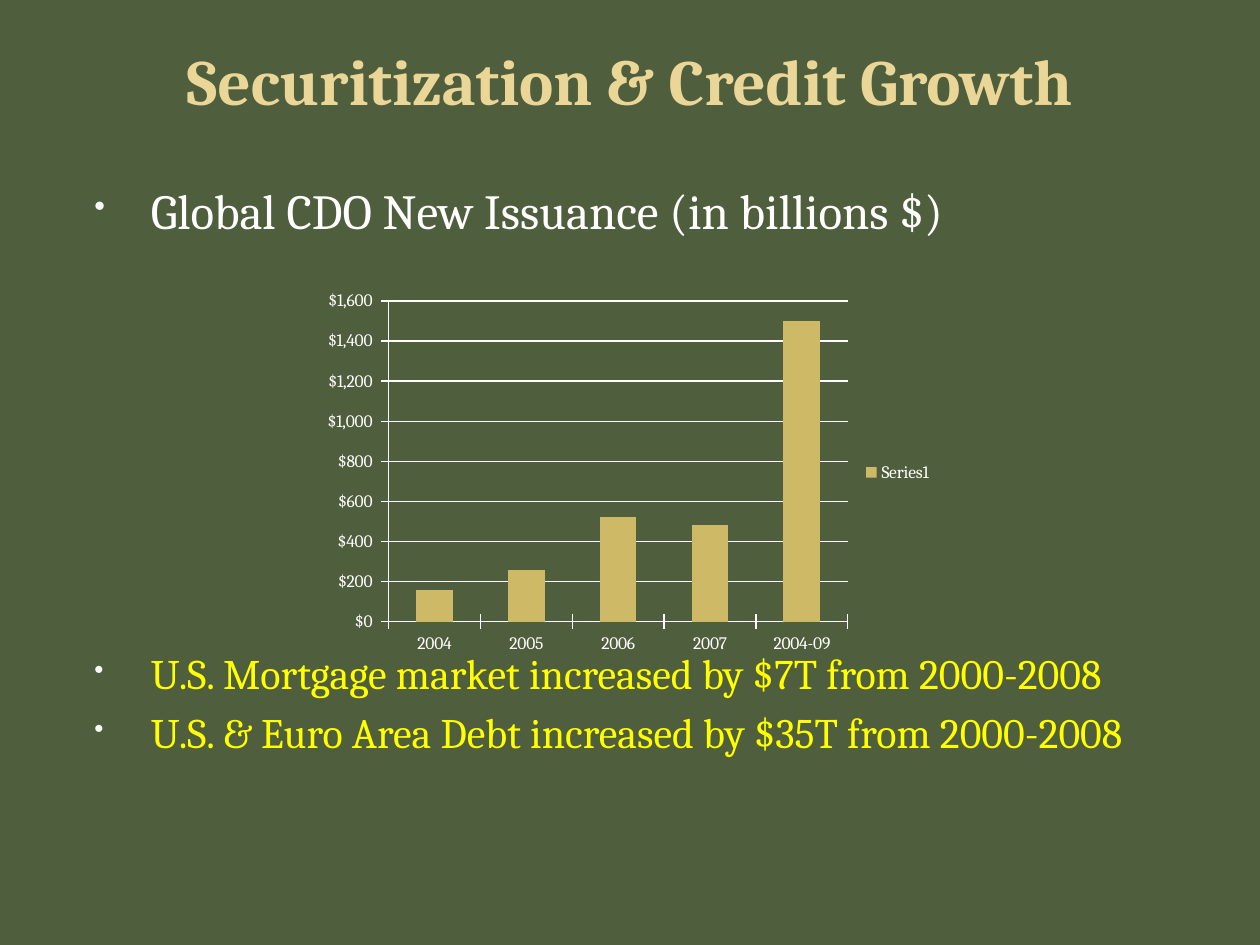
from dataclasses import dataclass

import pptx
import pptx.chart.data
import pptx.dml.color
import pptx.enum.chart
import pptx.enum.text
import pptx.oxml
import pptx.oxml.ns
import pptx.util

Pt = pptx.util.Pt
FONT = "Cambria"
COLORS = {
    "background": "4F5E3C",
    "title": "EAD696",
    "text": "FFFFFF",
    "highlight": "FFFF00",
    "bullet": "F9F9F9",
    "bar": "CEB966",
}


@dataclass
class Bullet:
    text: str
    size: float
    color: str
    line_height: float
    gap_before: float


BULLETS = [
    Bullet("Global CDO New Issuance (in billions $)", 28, "text", 37.5, 0),
    # The wide gap leaves room for the chart.
    Bullet("U.S. Mortgage market increased by $7T from 2000-2008", 24, "highlight", 28.8, 233.5),
    Bullet("U.S. & Euro Area Debt increased by $35T from 2000-2008", 24, "highlight", 28.8, 4.7),
]
ISSUANCE = {"2004": 160, "2005": 260, "2006": 520, "2007": 480, "2004-09": 1500}


def rgb(name: str) -> pptx.dml.color.RGBColor:
    return pptx.dml.color.RGBColor.from_string(COLORS[name])


def set_attributes(target, values: dict) -> None:
    for name, value in values.items():
        setattr(target, name, value)


def format_font(font, size: float, color: str, bold: bool = False) -> None:
    set_attributes(font, {"name": FONT, "size": Pt(size), "bold": bold})
    font.color.rgb = rgb(color)


def add_title(page, text: str) -> None:
    title = page.shapes.title
    set_attributes(title, {"left": Pt(36), "top": Pt(12.24), "width": Pt(648), "height": Pt(66.24)})
    frame = title.text_frame
    set_attributes(frame, {
        "text": text,
        "word_wrap": True,
        "auto_size": pptx.enum.text.MSO_AUTO_SIZE.NONE,
        "vertical_anchor": pptx.enum.text.MSO_ANCHOR.MIDDLE,
    })
    para = frame.paragraphs[0]
    para.alignment = pptx.enum.text.PP_ALIGN.CENTER
    format_font(para.runs[0].font, 36.9, "title", bold=True)


def add_bullet_mark(para) -> None:
    """Give the paragraph a hanging indent and a small round bullet."""
    properties = para._p.get_or_add_pPr()
    properties.set("marL", str(Pt(43.2)))
    properties.set("indent", str(Pt(-32.4)))
    namespace = pptx.oxml.ns.nsdecls("a")
    for markup in (
        f'<a:buClr {namespace}><a:srgbClr val="{COLORS["bullet"]}"/></a:buClr>',
        f'<a:buSzPct {namespace} val="65000"/>',
        f'<a:buChar {namespace} char="•"/>',
    ):
        properties.append(pptx.oxml.parse_xml(markup))


def add_bullets(page, bullets: list[Bullet]) -> None:
    box = page.shapes.add_textbox(Pt(36), Pt(95.76), Pt(648), Pt(419.76))
    frame = box.text_frame
    frame.word_wrap = True
    for index, bullet in enumerate(bullets):
        para = frame.add_paragraph() if index else frame.paragraphs[0]
        set_attributes(para, {
            "line_spacing": Pt(bullet.line_height),
            "space_before": Pt(bullet.gap_before),
        })
        add_bullet_mark(para)
        span = para.add_run()
        span.text = bullet.text
        format_font(span.font, bullet.size, bullet.color)


def format_line(line) -> None:
    line.color.rgb = rgb("text")
    line.width = Pt(0.75)


def add_issuance_chart(page, values: dict[str, int]) -> None:
    data = pptx.chart.data.CategoryChartData()
    data.categories = list(values)
    data.add_series("Series1", list(values.values()))
    kind = pptx.enum.chart.XL_CHART_TYPE.COLUMN_CLUSTERED
    chart = page.shapes.add_chart(kind, Pt(180), Pt(162), Pt(360), Pt(216), data).chart
    format_font(chart.font, 10, "text")
    set_attributes(chart, {"has_title": False, "has_legend": True})
    set_attributes(chart.legend, {
        "position": pptx.enum.chart.XL_LEGEND_POSITION.RIGHT,
        "include_in_layout": False,
    })

    plot = chart.plots[0]
    set_attributes(plot, {"gap_width": 150, "vary_by_categories": False})
    fill = plot.series[0].format.fill
    fill.solid()
    fill.fore_color.rgb = rgb("bar")

    for axis in (chart.category_axis, chart.value_axis):
        axis.major_tick_mark = pptx.enum.chart.XL_TICK_MARK.CROSS
        format_line(axis.format.line)
    axis = chart.value_axis
    set_attributes(axis, {
        "minimum_scale": 0,
        "maximum_scale": 1600,
        "major_unit": 200,
        "has_major_gridlines": True,
    })
    format_line(axis.major_gridlines.format.line)
    set_attributes(axis.tick_labels, {
        "number_format": r'"$"#,##0_);[Red]\("$"#,##0\)',
        "number_format_is_linked": False,
    })


def main() -> None:
    deck = pptx.Presentation()
    set_attributes(deck, {"slide_width": Pt(720), "slide_height": Pt(540)})
    page = deck.slides.add_slide(deck.slide_layouts[5])
    background = page.background.fill
    background.solid()
    background.fore_color.rgb = rgb("background")
    add_title(page, "Securitization & Credit Growth")
    add_bullets(page, BULLETS)
    add_issuance_chart(page, ISSUANCE)
    deck.save("out.pptx")


if __name__ == "__main__":
    main()
